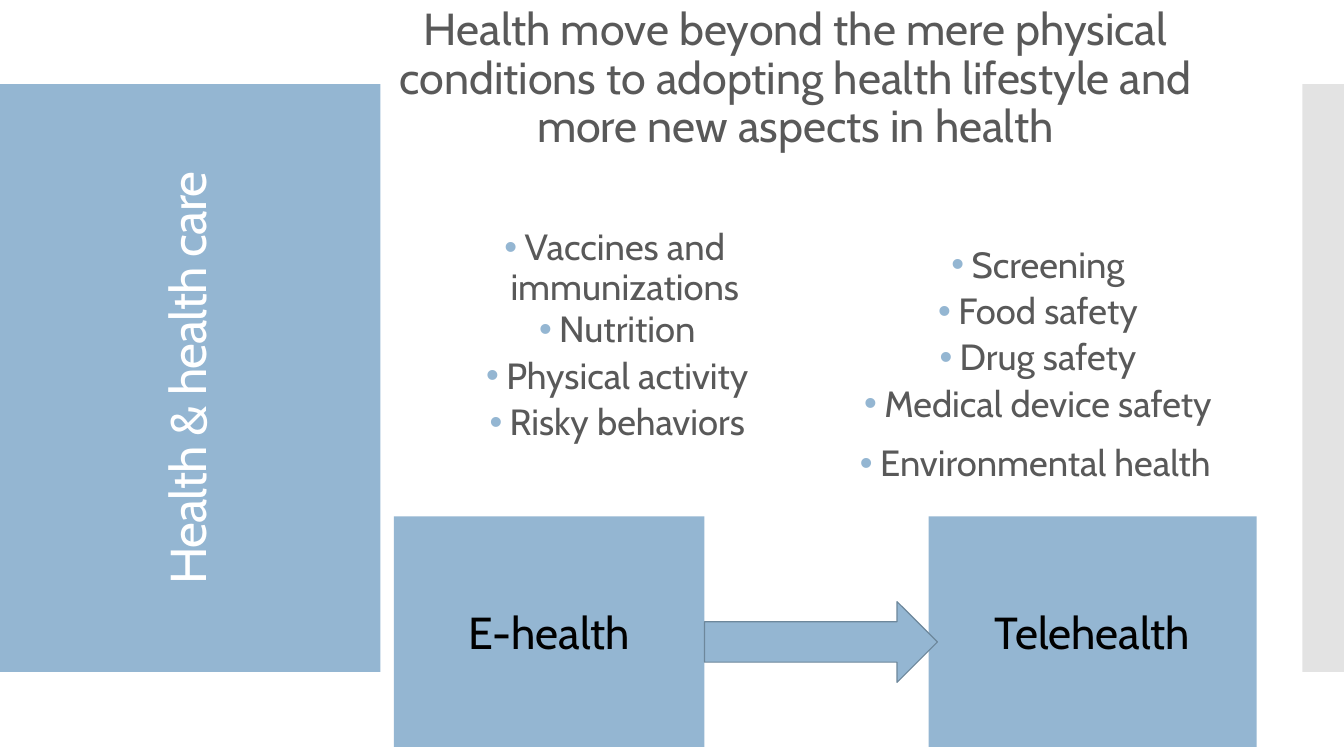
from dataclasses import dataclass

from lxml.etree import SubElement
from pptx import Presentation
from pptx.dml.color import RGBColor
from pptx.enum.shapes import MSO_SHAPE
from pptx.enum.text import MSO_ANCHOR, PP_ALIGN
from pptx.oxml.ns import qn
from pptx.util import Inches, Pt


@dataclass(frozen=True)
class Theme:
    font: str = "Cabin"
    blue: RGBColor = RGBColor(0x94, 0xB6, 0xD2)
    outline: RGBColor = RGBColor(0x6D, 0x87, 0x9B)
    grey: RGBColor = RGBColor(0xC8, 0xC8, 0xC8)
    text: RGBColor = RGBColor(0x59, 0x59, 0x59)
    white: RGBColor = RGBColor(0xFF, 0xFF, 0xFF)
    black: RGBColor = RGBColor(0, 0, 0)
    title_size: int = 36
    heading_size: int = 32
    list_size: int = 26
    line_spacing: float = 0.9


THEME = Theme()


@dataclass(frozen=True)
class Box:
    left: int
    top: int
    width: int
    height: int

    def share(self, left, top, width, height):
        """Return the inner box at the given shares of this box."""
        return Box(int(self.left + left * self.width), int(self.top + top * self.height),
                   int(width * self.width), int(height * self.height))

    def frame(self):
        return self.left, self.top, self.width, self.height


def add_block(slide, box, fill, kind=MSO_SHAPE.RECTANGLE, outline=None):
    shape = slide.shapes.add_shape(kind, *box.frame())
    shape.shadow.inherit = False
    shape.fill.solid()
    shape.fill.fore_color.rgb = fill
    if outline is None:
        shape.line.fill.background()
    else:
        shape.line.color.rgb = outline
        shape.line.width = Pt(0.85)
    return shape


def add_text_box(slide, box, anchor):
    shape = slide.shapes.add_textbox(*box.frame())
    shape.text_frame.word_wrap = True
    shape.text_frame.vertical_anchor = anchor
    return shape


def write(paragraph, text, size, color, line_spacing=None):
    paragraph.alignment = PP_ALIGN.CENTER
    paragraph.line_spacing = line_spacing
    run = paragraph.add_run()
    run.text = text
    run.font.name = THEME.font
    run.font.size = Pt(size)
    run.font.color.rgb = color
    return run


def add_bullet(paragraph, indent):
    properties = paragraph._p.get_or_add_pPr()
    properties.set("marL", str(Inches(indent)))
    properties.set("indent", str(Inches(-0.2)))
    color = SubElement(properties, qn("a:buClr"))
    SubElement(color, qn("a:srgbClr"), val=str(THEME.blue))
    SubElement(properties, qn("a:buFont"), typeface="Arial")
    SubElement(properties, qn("a:buChar"), char="•")


# Side panel with the title turned to read upwards
def title_panel(slide, box, title):
    add_block(slide, box, THEME.blue)
    left = box.left + (box.width - box.height) // 2
    top = box.top + (box.height - box.width) // 2
    shape = add_text_box(slide, Box(left, top, box.height, box.width), MSO_ANCHOR.MIDDLE)
    shape.rotation = 270
    run = write(shape.text_frame.paragraphs[0], title, THEME.title_size,
                THEME.white, THEME.line_spacing)
    run._r.get_or_add_rPr().set("spc", "-60")


# Half-transparent strip at the right edge
def edge_strip(slide, box):
    shape = add_block(slide, box, THEME.grey)
    color = shape._element.spPr.find(qn("a:solidFill"))[0]
    SubElement(color, qn("a:alpha"), val="50000")


# Statement above the lists
def heading(slide, box, text):
    shape = add_text_box(slide, box, MSO_ANCHOR.BOTTOM)
    write(shape.text_frame.paragraphs[0], text, THEME.heading_size,
          THEME.text, THEME.line_spacing)


# Centred bullet list; each item is (text, indent, space before, space after)
def bullet_list(slide, box, items):
    frame = add_text_box(slide, box, MSO_ANCHOR.TOP).text_frame
    for index, (text, indent, before, after) in enumerate(items):
        paragraph = frame.add_paragraph() if index else frame.paragraphs[0]
        write(paragraph, text, THEME.list_size, THEME.text, THEME.line_spacing)
        paragraph.space_before = Pt(before if index else 0)
        paragraph.space_after = Pt(after)
        add_bullet(paragraph, indent)


# Two blocks joined by an arrow
def flow(slide, box, source, target):
    cards = ((target, box.share(0.62, 0, 0.38, 1)), (source, box.share(0, 0, 0.36, 1)))
    for text, card in cards:
        frame = add_block(slide, card, THEME.blue).text_frame
        frame.vertical_anchor = MSO_ANCHOR.MIDDLE
        write(frame.paragraphs[0], text, THEME.heading_size, THEME.black)
    add_block(slide, box.share(0.36, 0.37, 0.27, 0.35), THEME.blue,
              MSO_SHAPE.RIGHT_ARROW, THEME.outline)


def inner_items(*texts):
    return [(text, 0.25, 2.5, 2.5) for text in texts]


def main():
    presentation = Presentation()
    presentation.slide_width = Inches(13.33)
    presentation.slide_height = Inches(7.5)
    slide = presentation.slides.add_slide(presentation.slide_layouts[6])
    page = Box(0, 0, presentation.slide_width, presentation.slide_height)

    title_panel(slide, page.share(0, 1 / 9, 0.283, 7 / 9), "Health & health care")
    edge_strip(slide, page.share(0.969, 1 / 9, 0.031, 7 / 9))
    heading(slide, page.share(0.283, 0, 0.618, 0.208),
            "Health move beyond the mere physical conditions to adopting "
            "health lifestyle and more new aspects in health")
    bullet_list(slide, page.share(0.289, 0.297, 0.337, 0.32),
                [("Vaccines and immunizations", 0.2, 12, 0)]
                + inner_items("Nutrition", "Physical activity", "Risky behaviors"))
    bullet_list(slide, page.share(0.628, 0.32, 0.285, 0.34),
                inner_items("Screening", "Food safety", "Drug safety",
                            "Medical device safety")
                + [("Environmental health", 0.2, 12, 0)])
    flow(slide, page.share(0.293, 0.683, 0.642, 0.305), "E-health", "Telehealth")

    presentation.save("out.pptx")


if __name__ == "__main__":
    main()
